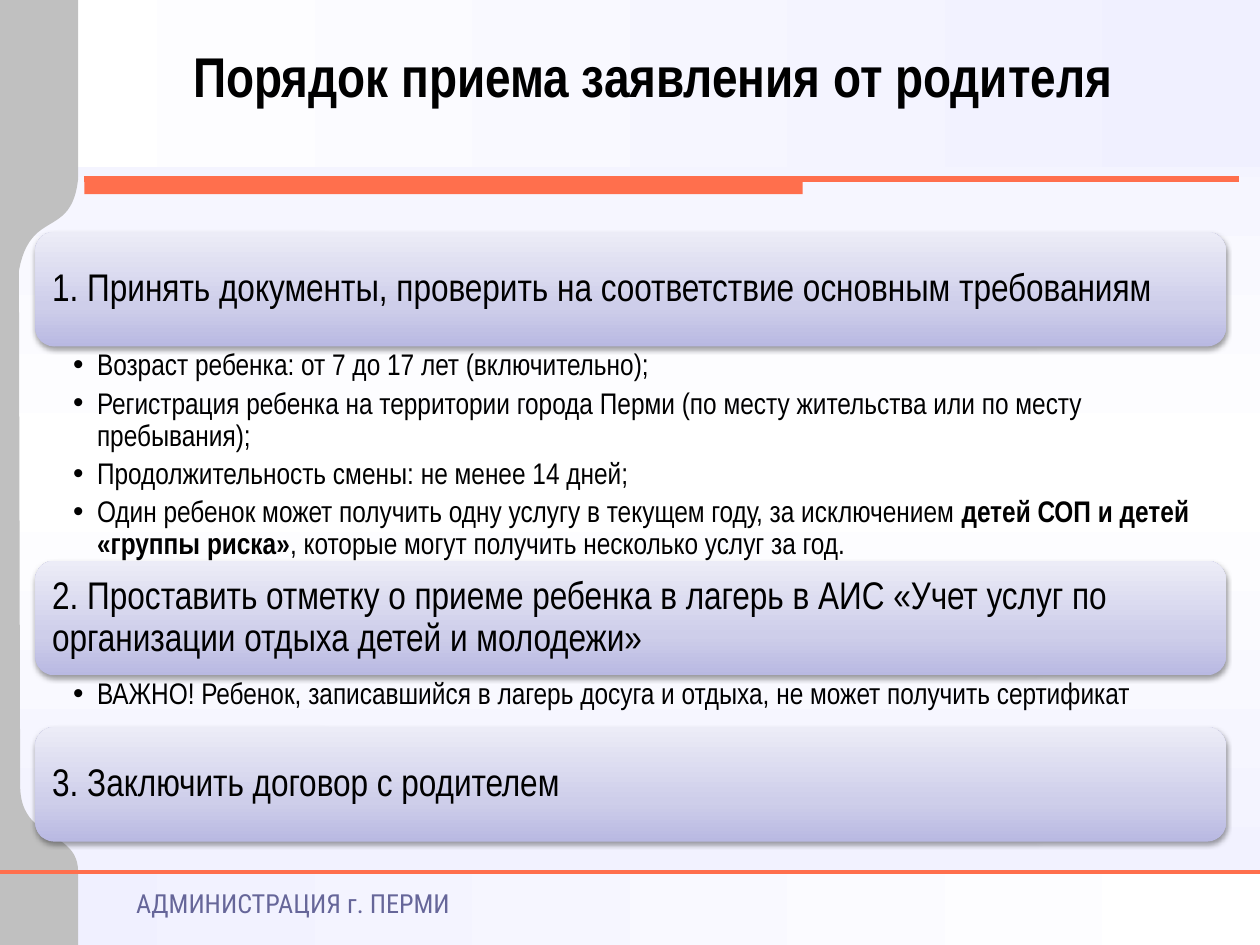
from lxml import etree
from pptx import Presentation
from pptx.dml.color import RGBColor
from pptx.enum.shapes import MSO_CONNECTOR, MSO_SHAPE
from pptx.enum.text import MSO_ANCHOR, MSO_AUTO_SIZE, PP_ALIGN
from pptx.oxml.ns import qn
from pptx.util import Inches, Pt

BLACK = RGBColor(0x00, 0x00, 0x00)
WHITE = RGBColor(0xFF, 0xFF, 0xFF)
PALE = RGBColor(0xF0, 0xF0, 0xFF)
GREY = RGBColor(0xC0, 0xC0, 0xC0)
ORANGE = RGBColor(0xFF, 0x6F, 0x4D)
VIOLET = RGBColor(0x66, 0x66, 0x99)
CARD_STOPS = [
    (0, RGBColor(0xB9, 0xB9, 0xE2)),
    (35, RGBColor(0xCE, 0xCE, 0xEA)),
    (100, RGBColor(0xEC, 0xEC, 0xF7)),
]
BODY_FONT = "Arial Narrow"
FOOTER_FONT = "Roboto Condensed"
CARD_HEIGHT = 0.91

STEPS = [
    ("1. Принять документы, проверить на соответствие основным требованиям", 1.7, [
        ["Возраст ребенка: от 7 до 17 лет (включительно);"],
        ["Регистрация ребенка на территории города Перми "
         "(по месту жительства или по месту пребывания);"],
        ["Продолжительность смены: не менее 14 дней;"],
        ["Один ребенок может получить одну услугу в текущем году, за исключением ",
         "детей СОП и детей «группы риска»",
         ", которые могут получить несколько услуг за год."],
    ]),
    ("2. Проставить отметку о приеме ребенка в лагерь в АИС "
     "«Учет услуг по организации отдыха детей и молодежи»", 0.41, [
        ["ВАЖНО! Ребенок, записавшийся в лагерь досуга и отдыха, "
         "не может получить сертификат"],
    ]),
    ("3. Заключить договор с родителем", 0, []),
]


def set_gradient(fill, element, stops, angle):
    """Give a fill the listed stops along a clockwise angle in degrees."""
    fill.gradient()
    fill.gradient_angle = (360 - angle) % 360
    stop_list = element.find(".//" + qn("a:gsLst"))
    for stop in list(stop_list):
        stop_list.remove(stop)
    for position, color in stops:
        stop = etree.SubElement(stop_list, qn("a:gs"), pos=str(position * 1000))
        etree.SubElement(stop, qn("a:srgbClr"), val=str(color))


def add_card_shadow(shape):
    """Add a soft shadow that falls straight down."""
    effects = shape.element.spPr.find(qn("a:effectLst"))
    shadow = etree.SubElement(
        effects, qn("a:outerShdw"), blurRad=str(Pt(3.1)), dist=str(Pt(1.6)),
        dir="5400000", rotWithShape="0")
    color = etree.SubElement(shadow, qn("a:srgbClr"), val=str(BLACK))
    etree.SubElement(color, qn("a:alpha"), val="38000")


def add_bullet(paragraph):
    """Turn a paragraph into a hanging bullet item."""
    paragraph.level = 1
    properties = paragraph._p.get_or_add_pPr()
    properties.set("marL", str(Inches(0.19)))
    properties.set("indent", str(Inches(-0.19)))
    etree.SubElement(properties, qn("a:buFont"), typeface="Arial")
    etree.SubElement(properties, qn("a:buChar"), char="•")


def write_text(frame, paragraphs, size, font=BODY_FONT, color=BLACK, bold=False,
               align=PP_ALIGN.LEFT, anchor=MSO_ANCHOR.TOP, insets=(0.1, 0.05, 0.1, 0.05),
               spacing=1.0, after=0, bullets=False):
    """Fill a frame; every second run of a paragraph is emphasised."""
    frame.word_wrap = True
    frame.auto_size = MSO_AUTO_SIZE.NONE
    frame.vertical_anchor = anchor
    (frame.margin_left, frame.margin_top,
     frame.margin_right, frame.margin_bottom) = map(Inches, insets)
    for index, runs in enumerate(paragraphs):
        paragraph = frame.add_paragraph() if index else frame.paragraphs[0]
        paragraph.alignment = align
        paragraph.line_spacing = spacing
        paragraph.space_before = Pt(0)
        paragraph.space_after = Pt(after)
        if bullets:
            add_bullet(paragraph)
        for position, text in enumerate(runs):
            run = paragraph.add_run()
            run.text = text
            run.font.name = font
            run.font.size = Pt(size)
            run.font.bold = bold or position % 2 == 1
            run.font.color.rgb = color


def add_block(slide, kind, left, top, width, height):
    """Add a preset shape without line or shadow."""
    shape = slide.shapes.add_shape(
        kind, Inches(left), Inches(top), Inches(width), Inches(height))
    shape.shadow.inherit = False
    shape.line.fill.background()
    return shape


def add_rule(slide, left, right, top, weight):
    """Add a horizontal orange line."""
    rule = slide.shapes.add_connector(
        MSO_CONNECTOR.STRAIGHT, Inches(left), Inches(top), Inches(right), Inches(top))
    rule.line.color.rgb = ORANGE
    rule.line.width = Pt(weight)
    etree.SubElement(rule._element.spPr, qn("a:effectLst"))


def curve_points(start, first, second, end, steps=24):
    """Return points along a cubic curve, without its start."""
    points = []
    for step in range(1, steps + 1):
        t = step / steps
        weights = ((1 - t) ** 3, 3 * t * (1 - t) ** 2, 3 * t * t * (1 - t), t ** 3)
        points.append(tuple(
            sum(weight * value for weight, value in zip(weights, values))
            for values in zip(start, first, second, end)))
    return points


def add_side_strip(slide, width, height):
    """Draw the grey strip with its curved notch at the left edge."""
    points = [(width, 0), (0, 0), (0, height), (width, height), (width, 6.92)]
    points += curve_points((width, 6.92), (width, 6.58), (0.17, 6.68), (0.16, 6.25))
    points.append((0.15, 2.15))
    points += curve_points((0.15, 2.15), (0.24, 1.65), (0.57, 1.9), (width, 1.42))
    builder = slide.shapes.build_freeform(
        Inches(width), Inches(1.42), scale=1.0)
    builder.add_line_segments([(Inches(x), Inches(y)) for x, y in points], close=True)
    strip = builder.convert_to_shape()
    strip.shadow.inherit = False
    strip.fill.solid()
    strip.fill.fore_color.rgb = GREY
    strip.line.fill.background()


def add_frame(slide):
    """Draw the background, bands, side strip and orange rules."""
    set_gradient(slide.background.fill, slide.element.cSld,
                 [(0, PALE), (50, WHITE), (100, PALE)], 90)
    for top, height, colors in ((0, 1.33, (WHITE, PALE)), (6.92, 0.58, (PALE, WHITE))):
        band = add_block(slide, MSO_SHAPE.RECTANGLE, 0, top, 10, height)
        set_gradient(band.fill, band.element.spPr, zip((0, 100), colors), 0)
    add_side_strip(slide, 0.62, 7.5)
    bar = add_block(slide, MSO_SHAPE.RECTANGLE, 0.67, 1.42, 5.7, 0.12)
    bar.fill.solid()
    bar.fill.fore_color.rgb = ORANGE
    add_rule(slide, 0.67, 9.83, 1.42, 3)
    add_rule(slide, 0, 10, 6.92, 2.25)


def add_footer(slide, left, top, width, height):
    """Write the name of the office at the bottom."""
    box = slide.shapes.add_textbox(*map(Inches, (left, top, width, height)))
    write_text(box.text_frame, [["АДМИНИСТРАЦИЯ г. ПЕРМИ"]], 15, font=FOOTER_FONT,
               color=VIOLET, insets=(0, 0.05, 0, 0.05))


def add_title(slide, left, top, width, height):
    """Place the title in front of the header band."""
    title = slide.shapes.title
    title.element.getparent().append(title.element)
    title.left, title.top, title.width, title.height = map(
        Inches, (left, top, width, height))
    write_text(title.text_frame, [["Порядок приема заявления от родителя "]], 32,
               bold=True, align=PP_ALIGN.CENTER)


def add_steps(slide, left, top, width):
    """Stack the step cards, each followed by its bullet list."""
    for heading, detail_height, details in STEPS:
        card = add_block(slide, MSO_SHAPE.ROUNDED_RECTANGLE, left, top, width, CARD_HEIGHT)
        set_gradient(card.fill, card.element.spPr, CARD_STOPS, 270)
        add_card_shadow(card)
        write_text(card.text_frame, [[heading]], 22, anchor=MSO_ANCHOR.MIDDLE,
                   insets=(0.09, 0.09, 0.09, 0.09), spacing=0.9)
        top += CARD_HEIGHT
        if details:
            box = slide.shapes.add_textbox(
                *map(Inches, (left, top, width, detail_height)))
            write_text(box.text_frame, details, 17, insets=(0.3, 0.03, 0.17, 0.03),
                       spacing=0.9, after=3.4, bullets=True)
        top += detail_height


def main():
    """Build the slide and save it."""
    presentation = Presentation()
    presentation.slide_width, presentation.slide_height = Inches(10), Inches(7.5)
    slide = presentation.slides.add_slide(presentation.slide_layouts[5])
    add_frame(slide)
    add_footer(slide, 1.08, 6.99, 3.5, 0.35)
    add_title(slide, 0.67, 0.28, 9.13, 0.64)
    add_steps(slide, 0.28, 1.84, 9.45)
    presentation.save("out.pptx")


if __name__ == "__main__":
    main()
